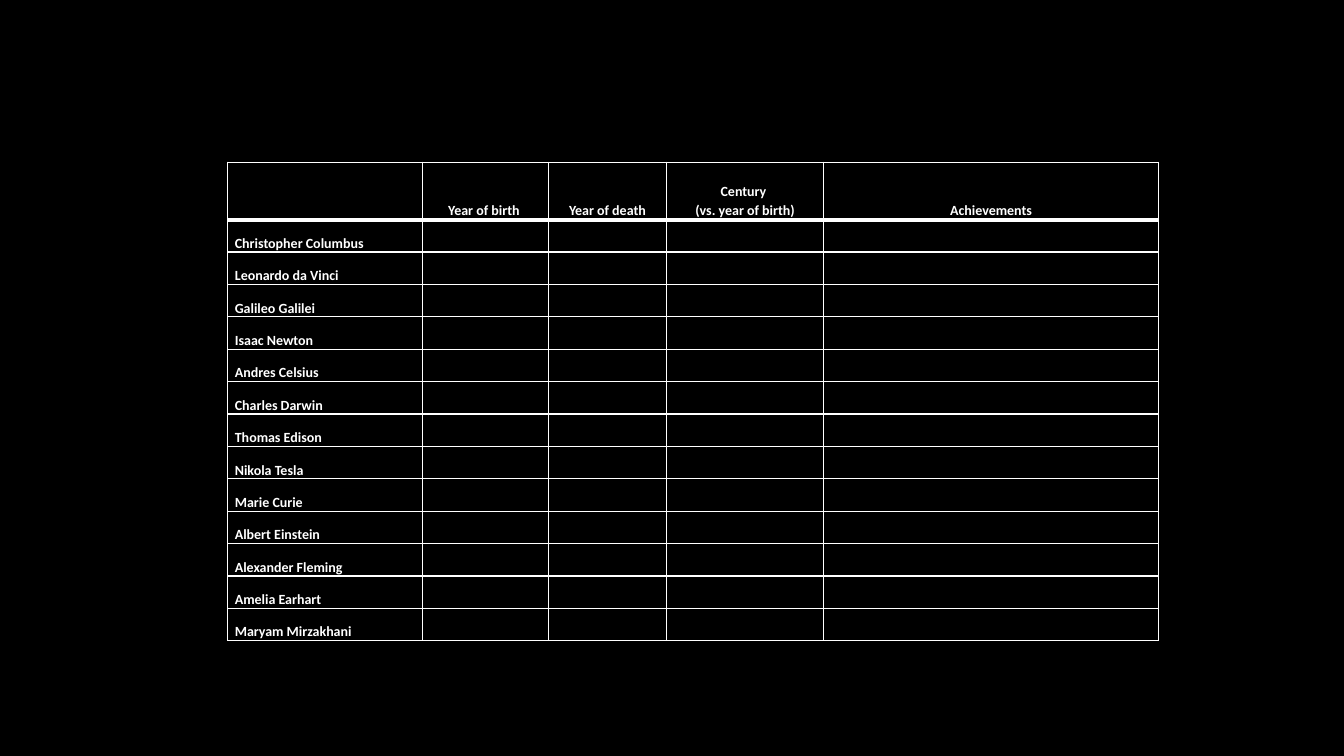
from lxml import etree
from pptx import Presentation
from pptx.dml.color import RGBColor
from pptx.enum.text import MSO_ANCHOR as Anchor, PP_ALIGN as Align
from pptx.oxml.ns import qn
from pptx.util import Inches, Pt

# Content
HEADERS = [
    [],
    ["Year of birth "],
    ["Year of death"],
    ["Century ", "(vs. year of birth)"],
    ["Achievements"],
]
PEOPLE = [
    "Christopher Columbus", "Leonardo da Vinci", "Galileo Galilei",
    "Isaac Newton", "Andres Celsius", "Charles Darwin", "Thomas Edison",
    "Nikola Tesla", "Marie Curie", "Albert Einstein", "Alexander Fleming",
    "Amelia Earhart", "Maryam Mirzakhani",
]
COLORS = {"background": "000000", "ink": "FFFFFF"}

# Grid, in inches
LEFT, TOP, HEIGHT = 2.26, 1.61, 4.75
COL_WIDTHS = [1.93, 1.25, 1.17, 1.56, 3.32]
HEADER_HEIGHT = 0.57
ROW_HEIGHT = (HEIGHT - HEADER_HEIGHT) / len(PEOPLE)
RULE, HEADER_RULE = 1, 3  # points


def set_borders(cell, top, bottom):
    tcPr = cell._tc.get_or_add_tcPr()
    widths = {"a:lnL": RULE, "a:lnR": RULE, "a:lnT": top, "a:lnB": bottom}
    for i, (tag, width) in enumerate(widths.items()):
        ln = etree.Element(qn(tag), w=str(Pt(width)))
        fill = etree.SubElement(ln, qn("a:solidFill"))
        etree.SubElement(fill, qn("a:srgbClr"), val=COLORS["ink"])
        tcPr.insert(i, ln)


def write(cell, lines, align):
    tf = cell.text_frame
    for i, line in enumerate(lines):
        p = tf.add_paragraph() if i else tf.paragraphs[0]
        p.alignment = align
        p.line_spacing = 1.15
        r = p.add_run()
        r.text = line
        r.font.name = "Calibri"
        r.font.size = Pt(10)
        r.font.bold = True
        r.font.color.rgb = RGBColor.from_string(COLORS["ink"])


# Slide
prs = Presentation()
prs.slide_width, prs.slide_height = Inches(13.33), Inches(7.5)
slide = prs.slides.add_slide(prs.slide_layouts[6])
background = slide.background.fill
background.solid()
background.fore_color.rgb = RGBColor.from_string(COLORS["background"])

# Table
rows = [HEADERS] + [[[name]] + [[]] * (len(HEADERS) - 1) for name in PEOPLE]
table = slide.shapes.add_table(
    len(rows), len(HEADERS), Inches(LEFT), Inches(TOP),
    Inches(sum(COL_WIDTHS)), Inches(HEIGHT)).table
table.first_row = table.horz_banding = False
for column, width in zip(table.columns, COL_WIDTHS):
    column.width = Inches(width)

for i, row in enumerate(rows):
    table.rows[i].height = Inches(ROW_HEIGHT if i else HEADER_HEIGHT)
    for j, lines in enumerate(row):
        cell = table.cell(i, j)
        cell.fill.background()
        cell.vertical_anchor = Anchor.BOTTOM
        cell.margin_left = cell.margin_right = Inches(0.07)
        cell.margin_top = cell.margin_bottom = 0
        set_borders(cell, top=HEADER_RULE if i == 1 else RULE,
                    bottom=HEADER_RULE if i == 0 else RULE)
        write(cell, lines, Align.LEFT if i else Align.CENTER)

prs.save("out.pptx")
